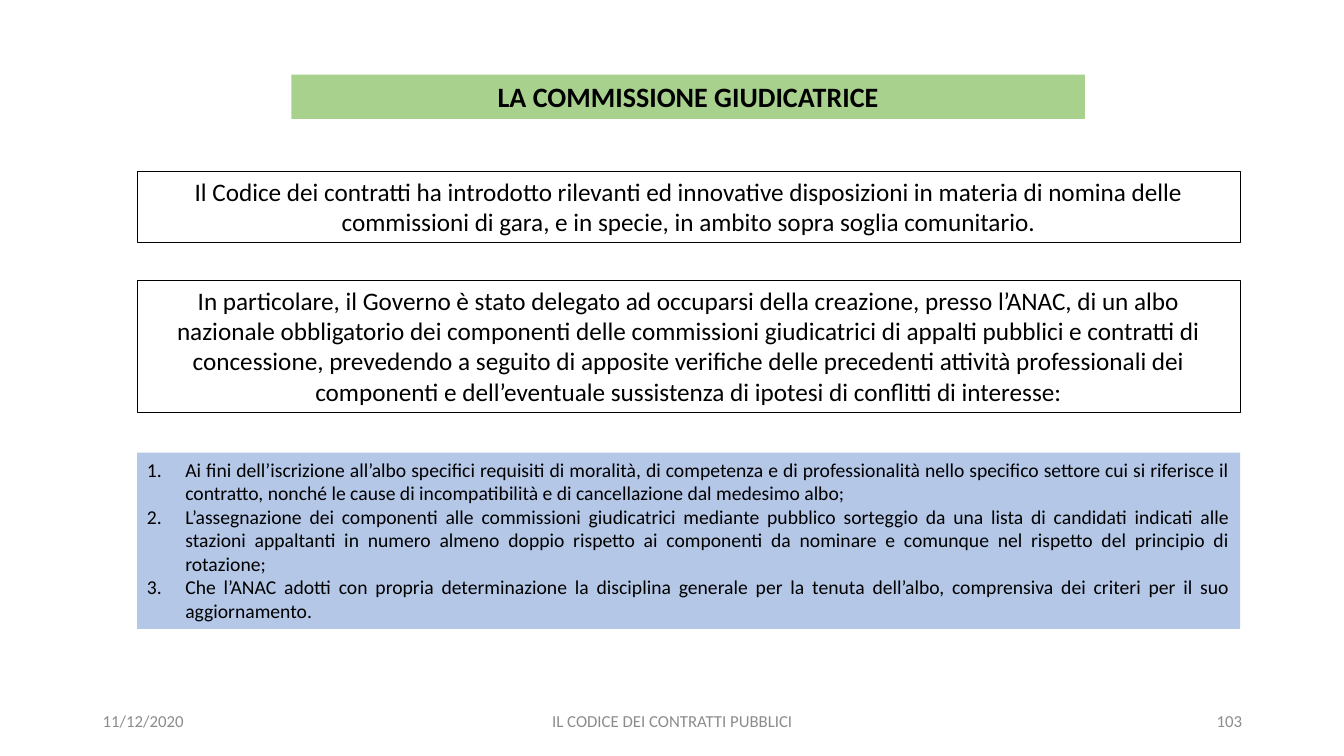
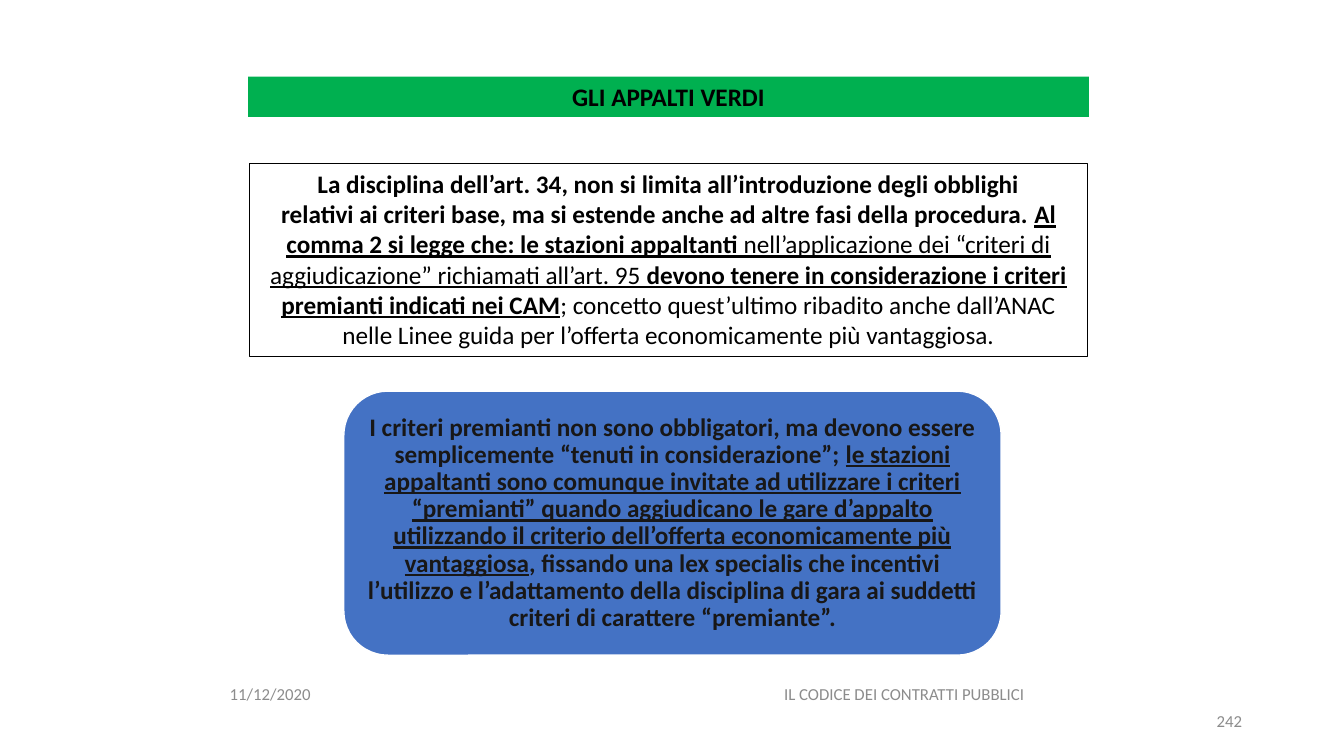
from lxml import etree
from pptx import Presentation
from pptx.dml.color import RGBColor
from pptx.enum.shapes import MSO_SHAPE as SHAPE
from pptx.enum.text import MSO_ANCHOR as ANCHOR, MSO_AUTO_SIZE as AUTO, PP_ALIGN as ALIGN
from pptx.oxml.ns import qn
from pptx.util import Inches, Pt

FONT = "Calibri"
COLORS = {
    "text": "000000", "muted": "8C8C8C", "ink": "181717", "white": "FFFFFF",
    "light_green": "A9D18E", "green": "00B050",
    "light_blue": "B4C7E7", "blue": "4472C4",
}
DATE = "11/12/2020"
FOOTER = "IL CODICE DEI CONTRATTI PUBBLICI"
NUMBER_BOX = (9.42, 6.95, 3, 0.4)


def color(name):
    return RGBColor.from_string(COLORS[name])


def write(sp, paragraphs, size, name="text", align=ALIGN.CENTER, anchor=ANCHOR.TOP):
    """Fill a shape; each paragraph is a list of (text, flags), flags from "b" and "u"."""
    tf = sp.text_frame
    tf.word_wrap = True
    tf.auto_size = AUTO.NONE
    tf.vertical_anchor = anchor
    for i, runs in enumerate(paragraphs):
        p = tf.add_paragraph() if i else tf.paragraphs[0]
        p.alignment = align
        for text, flags in runs:
            r = p.add_run()
            r.text = text
            r.font.name, r.font.size = FONT, Pt(size)
            r.font.bold, r.font.underline = "b" in flags, "u" in flags
            r.font.color.rgb = color(name)
    return tf


def add_panel(s, box, fill=None, line=None, width=0.75, shape=SHAPE.RECTANGLE):
    sp = s.shapes.add_shape(shape, *map(Inches, box))
    sp.shadow.inherit = False
    if fill:
        sp.fill.solid()
        sp.fill.fore_color.rgb = color(fill)
    else:
        sp.fill.background()
    if line:
        sp.line.color.rgb = color(line)
        sp.line.width = Pt(width)
    else:
        sp.line.fill.background()
    return sp


def add_title(s, box, text, fill, size):
    sp = s.shapes.title
    sp.left, sp.top, sp.width, sp.height = map(Inches, box)
    sp.fill.solid()
    sp.fill.fore_color.rgb = color(fill)
    write(sp, [[(text, "b")]], size, anchor=ANCHOR.MIDDLE)


def add_footer(s, date_box, footer_box, number):
    parts = [
        (date_box, DATE, ALIGN.LEFT),
        (footer_box, FOOTER, ALIGN.CENTER),
        (NUMBER_BOX, number, ALIGN.RIGHT),
    ]
    for box, text, align in parts:
        sp = s.shapes.add_textbox(*map(Inches, box))
        write(sp, [[(text, "")]], 12, "muted", align, ANCHOR.MIDDLE)


def add_numbered_list(s, box, items):
    sp = add_panel(s, box, fill="light_blue")
    tf = write(sp, [[(item, "")] for item in items], 14, align=ALIGN.JUSTIFY)
    indent = Inches(0.38)
    for p in tf.paragraphs:
        pPr = p._p.get_or_add_pPr()
        pPr.set("marL", str(indent))
        pPr.set("indent", str(-indent))
        etree.SubElement(pPr, qn("a:buFont"), typeface="+mj-lt")
        etree.SubElement(pPr, qn("a:buAutoNum"), type="arabicPeriod")


def add_commission_slide(prs):
    s = prs.slides.add_slide(prs.slide_layouts[5])
    add_title(s, (2.89, 0.74, 7.87, 0.44), "LA COMMISSIONE GIUDICATRICE", "light_green", 20)

    # Outlined statements and list share one column
    left, width = 1.36, 10.94
    statements = [
        (1.7, 0.71, "Il Codice dei contratti ha introdotto rilevanti ed innovative disposizioni in "
         "materia di nomina delle commissioni di gara, e in specie, in ambito sopra soglia "
         "comunitario."),
        (2.78, 1.31, "In particolare, il Governo è stato delegato ad occuparsi della creazione, "
         "presso l’ANAC, di un albo nazionale obbligatorio dei componenti delle commissioni "
         "giudicatrici di appalti pubblici e contratti di concessione, prevedendo a seguito di "
         "apposite verifiche delle precedenti attività professionali dei componenti e "
         "dell’eventuale sussistenza di ipotesi di conflitti di interesse:"),
    ]
    for top, height, text in statements:
        write(add_panel(s, (left, top, width, height), line="text"), [[(text, "")]], 18)
    add_numbered_list(s, (left, 4.49, width, 1.75), [
        "Ai fini dell’iscrizione all’albo specifici requisiti di moralità, di competenza e di "
        "professionalità nello specifico settore cui si riferisce il contratto, nonché le cause "
        "di incompatibilità e di cancellazione dal medesimo albo;",
        "L’assegnazione dei componenti alle commissioni giudicatrici mediante pubblico sorteggio "
        "da una lista di candidati indicati alle stazioni appaltanti in numero almeno doppio "
        "rispetto ai componenti da nominare e comunque nel rispetto del principio di rotazione;",
        "Che l’ANAC adotti con propria determinazione la disciplina generale per la tenuta "
        "dell’albo, comprensiva dei criteri per il suo aggiornamento.",
    ])
    add_footer(s, (0.92, 6.95, 3, 0.4), (4.42, 6.95, 4.5, 0.4), "103")


def add_green_slide(prs):
    s = prs.slides.add_slide(prs.slide_layouts[5])
    add_title(s, (2.46, 0.76, 8.34, 0.4), "GLI APPALTI VERDI", "green", 18)

    # Outlined rule
    write(add_panel(s, (2.47, 1.62, 8.32, 1.92), line="text"), [
        [("La disciplina dell’art. 34, non si limita all’introduzione degli obblighi", "b")],
        [("relativi ai criteri base, ma si estende anche ad altre fasi della procedura. ", "b"),
         ("Al comma 2 si legge che: le stazioni appaltanti ", "bu"),
         ("nell’applicazione dei “criteri di aggiudicazione” richiamati all’art. 95 ", "u"),
         ("devono tenere in considerazione i criteri premianti indicati nei CAM", "bu"),
         ("; concetto quest’ultimo ribadito anche dall’ANAC nelle Linee guida per l’offerta "
          "economicamente più vantaggiosa.", "")],
    ], 18)

    # Rounded remark
    sp = add_panel(s, (3.41, 3.88, 6.52, 2.62), "blue", "white", 1, SHAPE.ROUNDED_RECTANGLE)
    tf = write(sp, [[
        ("I criteri premianti non sono obbligatori, ma devono essere semplicemente “tenuti in "
         "considerazione”; ", "b"),
        ("le stazioni appaltanti sono comunque invitate ad utilizzare i criteri “premianti” "
         "quando aggiudicano le gare d’appalto utilizzando il criterio dell’offerta "
         "economicamente più vantaggiosa", "bu"),
        (", fissando una lex specialis che incentivi l’utilizzo e l’adattamento della disciplina "
         "di gara ai suddetti criteri di carattere “premiante”.", "b"),
    ]], 18, "ink", anchor=ANCHOR.MIDDLE)
    tf.margin_left = tf.margin_right = tf.margin_top = tf.margin_bottom = Inches(0.07)
    tf.paragraphs[0].line_spacing = 0.9
    add_footer(s, (2.18, 6.68, 2.5, 0.4), (7.14, 6.68, 3.66, 0.4), "242")


def main():
    prs = Presentation()
    prs.slide_width, prs.slide_height = Inches(13.33), Inches(7.5)
    add_commission_slide(prs)
    add_green_slide(prs)
    prs.save("out.pptx")


if __name__ == "__main__":
    main()
